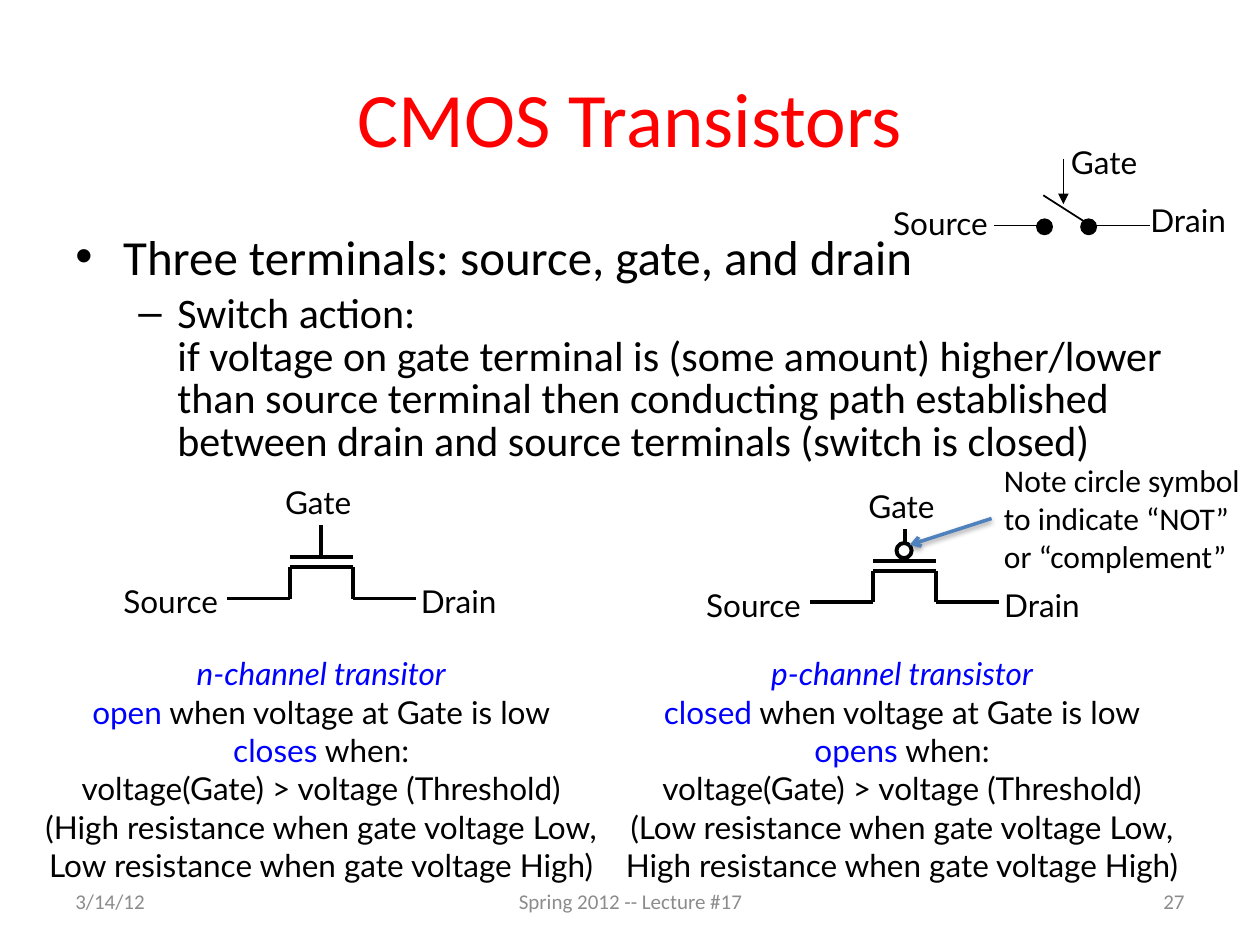
import pptx
import pptx.util
import pptx.dml.color
import pptx.enum.shapes
import pptx.enum.text
import pptx.oxml
import pptx.oxml.ns

COLUMNS, ROWS = 100, 75
CELL = pptx.util.Inches(10) // COLUMNS
NAMESPACE = 'xmlns:a="http://schemas.openxmlformats.org/drawingml/2006/main"'
ALIGN = pptx.enum.text.PP_ALIGN
ANCHOR = pptx.enum.text.MSO_ANCHOR
BLACK, BLUE, GREY = "000000", "0000FF", "8C8C8C"
SHADOW = ('<a:outerShdw blurRad="39400" dist="20000" dir="5400000" rotWithShape="0">'
          '<a:srgbClr val="000000"><a:alpha val="38000"/></a:srgbClr></a:outerShdw>')


def cells(*values):
    """Turn grid units into slide lengths."""
    return [round(value * CELL) for value in values]


def color(value):
    """Turn a hex string into a colour."""
    return pptx.dml.color.RGBColor.from_string(value)


def xml(body):
    """Parse a drawing element given without its namespace."""
    name, rest = body[1:].split(" ", 1)
    return pptx.oxml.parse_xml(f"<{name} {NAMESPACE} {rest}")


def add_spans(para, spans, size, font):
    """Fill a paragraph with (text, colour, italic) spans, breaking at newlines."""
    for words, shade, italic in spans:
        for index, piece in enumerate(words.split("\n")):
            if index:
                para.add_line_break()
            if piece:
                span = para.add_run()
                span.text = piece
                span.font.size, span.font.name = pptx.util.Pt(size), font
                span.font.color.rgb = color(shade)
                span.font.italic = italic


def add_text(shapes, box, paras, size=18, font="Lato", shade=BLACK, align=ALIGN.LEFT,
             leading=None, tight=False, anchor=ANCHOR.TOP):
    """Add a text box; paras is a string or a list of span lists."""
    frame = shapes.add_textbox(*cells(*box)).text_frame
    frame.word_wrap = True
    frame.vertical_anchor = anchor
    if tight:
        frame.margin_left = frame.margin_right = pptx.util.Inches(0.02)
        frame.margin_top = frame.margin_bottom = pptx.util.Inches(0.03)
    if isinstance(paras, str):
        paras = [[(paras, shade, False)]]
    for index, spans in enumerate(paras):
        para = frame.add_paragraph() if index else frame.paragraphs[0]
        para.alignment = align
        if leading:
            para.line_spacing = pptx.util.Pt(leading)
        add_spans(para, spans, size, font)
    return frame


def add_line(shapes, start, end, width=2.25, shade=BLACK, head=None, effect=""):
    """Draw a straight line with an optional arrowhead at its end."""
    line = shapes.add_connector(pptx.enum.shapes.MSO_CONNECTOR.STRAIGHT, *cells(*start, *end))
    line.line.width = pptx.util.Pt(width)
    line.line.color.rgb = color(shade)
    if head:
        line.line._get_or_add_ln().append(xml(f'<a:tailEnd type="{head}"/>'))
    line._element.spPr.append(xml(f'<a:effectLst >{effect}</a:effectLst>'))


def add_dot(shapes, left, top, fill, width):
    """Draw a small outlined circle."""
    dot = shapes.add_shape(pptx.enum.shapes.MSO_SHAPE.OVAL, *cells(left, top, 1.2, 1.2))
    dot.shadow.inherit = False
    dot.fill.solid()
    dot.fill.fore_color.rgb = color(fill)
    dot.line.color.rgb = color(BLACK)
    dot.line.width = pptx.util.Pt(width)


def add_body(page, box):
    """Place the two-level bullet list."""
    items = [("Three terminals: source, gate, and drain", 28, "•", 0.38, 0.38, 1.0),
             ("Switch action:\nif voltage on gate terminal is (some amount) higher/lower than "
              "source terminal then conducting path established between drain and source "
              "terminals (switch is closed)", 24, "–", 0.81, 0.31, 0.85)]
    frame = add_text(page.shapes, box, [[] for item in items])
    for level, (words, size, bullet, margin, hang, leading) in enumerate(items):
        para = frame.paragraphs[level]
        para.level = level
        para.line_spacing = leading
        para.space_before = pptx.util.Pt(size * 0.2)
        add_spans(para, [(words, BLACK, False)], size, "Calibri")
        props = para._p.get_or_add_pPr()
        props.set("marL", str(pptx.util.Inches(margin)))
        props.set("indent", str(-pptx.util.Inches(hang)))
        props.append(xml('<a:buFont typeface="Arial"/>'))
        props.append(xml(f'<a:buChar char="{bullet}"/>'))


def add_transistor(page, box, source, offset, source_align, inverted=False):
    """Draw a transistor symbol with its three labels inside a box."""
    left, top, width, height = box
    shapes = page.shapes.add_group_shape().shapes
    step, middle = width / 3, left + width / 2
    base, channel, plate = top + height, top + height - 2.5, top + height - 3.3
    inner, outer = left + step, left + 2 * step
    for words, place, align in (
            ("Gate", (left + 3.8, top - 3.7, 6.9, 4.7), ALIGN.CENTER),
            (source, (left - offset, base - 1.65, 9, 4.7), source_align),
            ("Drain", (left + width + 0.2, base - 1.65, 7, 4.7), ALIGN.LEFT)):
        add_text(shapes, place, words, align=align, leading=22, tight=True)
    path = [(left, base), (inner, base), (inner, channel), (outer, channel),
            (outer, base), (left + width, base)]
    for start, end in zip(path, path[1:]):
        add_line(shapes, start, end)
    add_line(shapes, (inner, plate), (outer, plate))
    add_line(shapes, (middle, plate), (middle, top))
    if inverted:
        add_dot(shapes, middle - 0.65, top + 1.1, "FFFFFF", 2.25)


def add_caption(page, box, kind, first, second, rules):
    """Describe how one kind of transistor switches."""
    opening = [(kind + "\n", BLUE, True), (first, BLUE, False),
               (" when voltage at Gate is low\n", BLACK, False),
               (second, BLUE, False), (" when:", BLACK, False)]
    lines = ["voltage(Gate) > voltage (Threshold)", *rules]
    add_text(page.shapes, box, [opening] + [[(line, BLACK, False)] for line in lines],
             align=ALIGN.CENTER, leading=22, tight=True)


def add_switch(page, box):
    """Draw the open switch with its gate arrow and labels."""
    left, top, width, height = box
    shapes = page.shapes.add_group_shape().shapes
    base = top + height
    add_line(shapes, (left, base), (left + 3.8, base), 1)
    add_line(shapes, (left + 3.9, base - 2.4), (left + 7.5, base - 0.1), 1)
    add_line(shapes, (left + 7.6, base), (left + width, base), 1)
    add_line(shapes, (left + 5.5, top), (left + 5.5, top + 3.6), 1, head="triangle")
    for shift in (3.4, 6.9):
        add_dot(shapes, left + shift, base - 0.5, BLACK, 1)
    for words, across, down, align in (("Gate", 5.9, -2.15, ALIGN.LEFT),
                                       ("Drain", 12.2, 2.45, ALIGN.LEFT),
                                       ("Source", -8.3, 2.7, ALIGN.RIGHT)):
        add_text(shapes, (left + across, top + down, 8, 4.9), words,
                 align=align, leading=26, tight=True)


def add_note(page, box):
    """Place the note and its arrow to the inverting circle."""
    left, top, width, height = box
    shapes = page.shapes.add_group_shape().shapes
    add_text(shapes, box, "Note circle symbol to indicate “NOT” or “complement”", font="Calibri")
    middle = top + height / 2
    add_line(shapes, (left, middle), (left - 6.5, middle + 2.1), 2, "4F81BD", "arrow", SHADOW)


def add_footer(page, box):
    """Place date, lecture and page number along the bottom."""
    left, top, width, height = box
    for words, across, wide, align in (("3/14/12", 0, 23.3, ALIGN.LEFT),
                                       ("Spring 2012 -- Lecture #17", 29.2, 31.7, ALIGN.CENTER),
                                       ("27", width - 23.3, 23.3, ALIGN.RIGHT)):
        add_text(page.shapes, (left + across, top, wide, height), words, size=12,
                 font="Calibri", shade=GREY, align=align, anchor=ANCHOR.MIDDLE)


def main():
    """Build and save the slide."""
    deck = pptx.Presentation()
    deck.slide_width, deck.slide_height = cells(COLUMNS, ROWS)
    page = deck.slides.add_slide(deck.slide_layouts[6])
    add_caption(page, (2.5, 51.55, 46, 18.5), "n-channel transitor", "open", "closes",
                ["(High resistance when gate voltage Low,", "Low resistance when gate voltage High)"])
    add_caption(page, (48.6, 51.55, 46, 18.5), "p-channel transistor", "closed", "opens",
                ["(Low resistance when gate voltage Low,", "High resistance when gate voltage High)"])
    add_text(page.shapes, (5, 3, 90, 12.5), "CMOS Transistors", size=44, font="Calibri",
             shade="FF0000", align=ALIGN.CENTER, anchor=ANCHOR.MIDDLE)
    add_body(page, (5, 17.5, 90, 20.6))
    add_transistor(page, (18, 41.7, 15, 5.8), "Source", 8.95, ALIGN.CENTER)
    add_transistor(page, (64.3, 42, 15, 5.8), "Source ", 8.9, ALIGN.RIGHT, inverted=True)
    add_footer(page, (5, 69.5, 90, 4))
    add_note(page, (78.7, 36.1, 21.3, 10.1))
    add_switch(page, (78.9, 12.6, 12.4, 5.3))
    deck.save("out.pptx")


if __name__ == "__main__":
    main()
